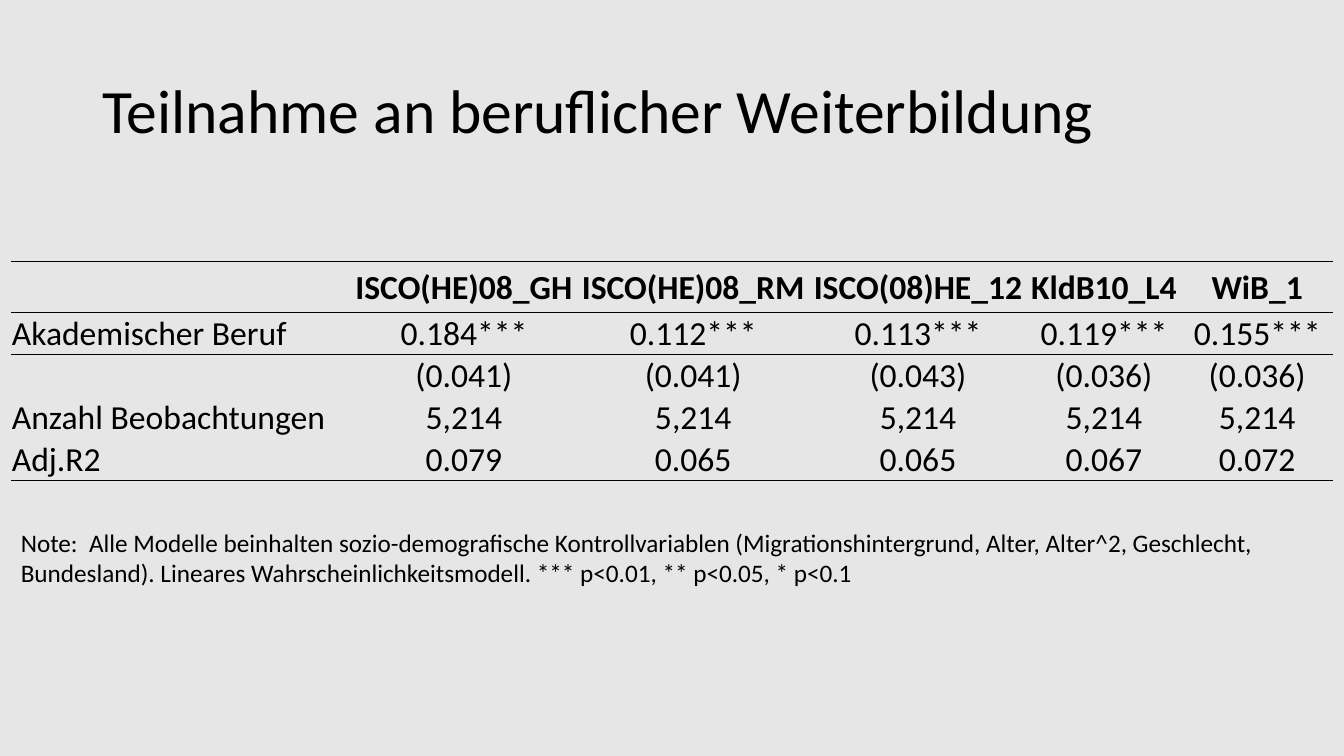
from dataclasses import dataclass

from lxml.etree import SubElement
from pptx import Presentation
from pptx.dml.color import RGBColor
from pptx.enum.text import MSO_ANCHOR, PP_ALIGN
from pptx.oxml.ns import qn
from pptx.util import Pt


@dataclass(frozen=True)
class Theme:
    font: str = "Calibri"
    background: str = "E7E6E6"
    ink: str = "000000"
    title_size: int = 44
    table_size: int = 24
    note_size: int = 18


theme = Theme()
NO_STYLE = "{2D5ABB26-0587-4C30-8999-92F81FD0307C}"


def add_run(paragraph, text, size, bold=False):
    run = paragraph.add_run()
    run.text = text
    run.font.name = theme.font
    run.font.size = Pt(size)
    run.font.bold = bold
    run.font.color.rgb = RGBColor.from_string(theme.ink)


def add_borders(cell, ruled_sides):
    """Draw a 1 pt line on the ruled sides and clear the other sides."""
    properties = cell._tc.get_or_add_tcPr()
    for side in ("lnL", "lnR", "lnT", "lnB"):
        line = SubElement(properties, qn(f"a:{side}"), w=str(Pt(1)))
        if side in ruled_sides:
            fill = SubElement(line, qn("a:solidFill"))
            SubElement(fill, qn("a:srgbClr"), val=theme.ink)
        else:
            SubElement(line, qn("a:noFill"))


presentation = Presentation()
presentation.slide_width = Pt(960)
presentation.slide_height = Pt(540)
slide = presentation.slides.add_slide(presentation.slide_layouts[6])
slide.background.fill.solid()
slide.background.fill.fore_color.rgb = RGBColor.from_string(theme.background)

# Title
title = slide.shapes.add_textbox(Pt(66), Pt(28.75), Pt(828), Pt(104.4)).text_frame
title.word_wrap = True
title.vertical_anchor = MSO_ANCHOR.MIDDLE
title.paragraphs[0].line_spacing = 0.9
add_run(title.paragraphs[0], "Teilnahme an beruflicher Weiterbildung", theme.title_size)

# Regression table
results = [
    ["", "ISCO(HE)08_GH", "ISCO(HE)08_RM", "ISCO(08)HE_12", "KldB10_L4", "WiB_1"],
    ["Akademischer Beruf", "0.184***", "0.112***", "0.113***", "0.119***", "0.155***"],
    ["", "(0.041)", "(0.041)", "(0.043)", "(0.036)", "(0.036)"],
    ["Anzahl Beobachtungen", "5,214", "5,214", "5,214", "5,214", "5,214"],
    ["Adj.R2", "0.079", "0.065", "0.065", "0.067", "0.072"],
]
column_widths = [242.6, 162, 165.6, 155.5, 110.2, 108.7]
row_heights = [36.5] + [30] * 4
ruled_edges = {0, 1, 2, 5}  # counted from the top edge of the table

table = slide.shapes.add_table(
    len(results), len(column_widths),
    Pt(7.8), Pt(187), Pt(sum(column_widths)), Pt(sum(row_heights)),
).table
table.first_row = False
table.horz_banding = False
table._tbl.tblPr.find(qn("a:tableStyleId")).text = NO_STYLE
for column, width in zip(table.columns, column_widths):
    column.width = Pt(width)

for row_index, values in enumerate(results):
    table.rows[row_index].height = Pt(row_heights[row_index])
    ruled_sides = [side for side, edge in (("lnT", row_index), ("lnB", row_index + 1))
                   if edge in ruled_edges]
    for column_index, value in enumerate(values):
        cell = table.cell(row_index, column_index)
        cell.margin_left = cell.margin_right = cell.margin_top = Pt(0.7)
        cell.margin_bottom = Pt(0)
        cell.vertical_anchor = MSO_ANCHOR.MIDDLE
        add_borders(cell, ruled_sides)
        cell.fill.background()
        paragraph = cell.text_frame.paragraphs[0]
        paragraph.alignment = PP_ALIGN.CENTER if column_index else PP_ALIGN.LEFT
        if value:
            add_run(paragraph, value, theme.table_size, bold=row_index == 0)

# Note
note_lines = [
    "Note:  Alle Modelle beinhalten sozio-demografische Kontrollvariablen "
    "(Migrationshintergrund, Alter, Alter^2, Geschlecht,",
    "Bundesland). Lineares Wahrscheinlichkeitsmodell. *** p<0.01, ** p<0.05, * p<0.1",
]
note = slide.shapes.add_textbox(Pt(7.8), Pt(373), Pt(909.4), Pt(51)).text_frame
note.word_wrap = False
for index, line_text in enumerate(note_lines):
    paragraph = note.add_paragraph() if index else note.paragraphs[0]
    add_run(paragraph, line_text, theme.note_size)

presentation.save("out.pptx")
